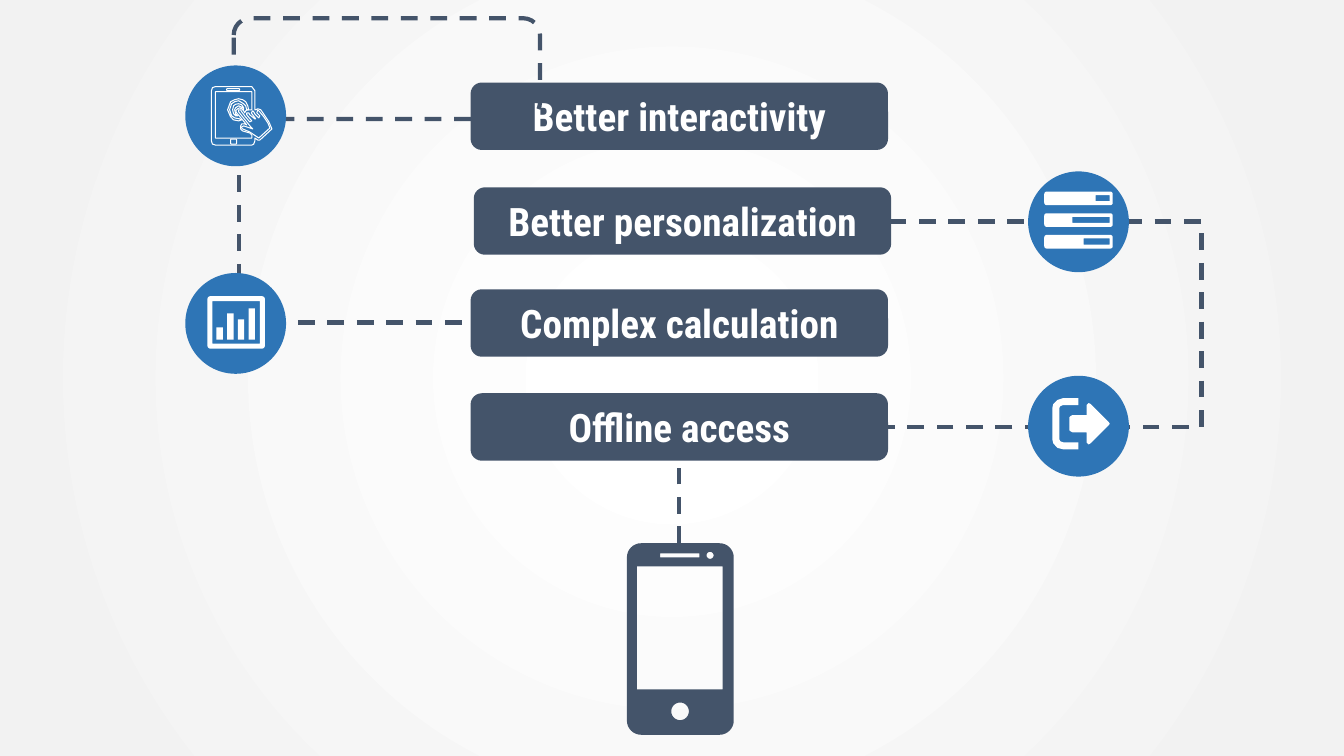
"""Build a slide on the benefits of mobile apps, with dashed links, round icons and a phone."""
from dataclasses import dataclass
from math import cos, pi, sin

from pptx import Presentation
from pptx.dml.color import RGBColor
from pptx.enum.dml import MSO_LINE
from pptx.enum.shapes import MSO_CONNECTOR as LINK, MSO_SHAPE as SHAPE
from pptx.enum.text import MSO_ANCHOR, PP_ALIGN
from pptx.oxml import parse_xml
from pptx.oxml.ns import nsdecls, qn
from pptx.util import Cm, Pt


@dataclass(frozen=True)
class Theme:
    slate: RGBColor = RGBColor(0x44, 0x54, 0x6A)
    blue: RGBColor = RGBColor(0x2E, 0x75, 0xB6)
    white: RGBColor = RGBColor(0xFF, 0xFF, 0xFF)
    mist: RGBColor = RGBColor(0xF2, 0xF2, 0xF2)
    font: str = "Roboto Condensed"
    label_size: Pt = Pt(28)
    link_width: Pt = Pt(3)
    icon_width: Pt = Pt(0.75)


def rounded(left, top, width, height, radius=0.0):
    """Return the points of a rectangle with rounded corners."""
    right, bottom = left + width - radius, top + height - radius
    left, top = left + radius, top + radius
    corners = [(right, bottom), (left, bottom), (left, top), (right, top)]
    steps = 8 if radius else 0
    return [
        (x + radius * cos(angle), y + radius * sin(angle))
        for quarter, (x, y) in enumerate(corners)
        for angle in [(quarter + step / max(steps, 1)) * pi / 2 for step in range(steps + 1)]
    ]


THEME = Theme()
SLIDE_SIZE = (33.87, 19.05)
LABEL_SIZE = (10.52, 1.7)
LABELS = [
    ("Offline access", 11.86, 9.91),
    ("Complex calculation", 11.86, 7.29),
    ("Better personalization", 11.94, 4.72),
    ("Better interactivity", 11.86, 2.08),
]
LOOP = (5.89, 0.46, 7.72, 2.54)
PHONE_LINK = (17.12, 13.69, 17.12, 11.61)
BENT_LINKS = [
    ((5.94, 3.02, 11.86, 8.13), 6.02),
    ((22.42, 5.58, 22.35, 10.76), 30.28),
]
CIRCLE = 2.54
GRID = CIRCLE / 100

PHONE_PLACE = (15.8, 13.69)
PHONE = [
    rounded(0, 0, 106, 190, 14),
    rounded(10, 23, 85, 122),
    rounded(33, 10, 39, 4),
    rounded(79, 8.5, 7, 7, 3.5),
    rounded(44, 158, 17.5, 17.5, 8.75),
]
SERVER = [
    outline
    for row, slot_left in enumerate([67, 44, 55])
    for outline in (
        rounded(16, 20 + 21.5 * row, 68, 13.5, 2.5),
        rounded(slot_left, 23.5 + 21.5 * row, 81 - slot_left, 6),
    )
]
BARS = [rounded(22, 23, 57, 52, 3), rounded(27, 28, 47, 42)] + [
    rounded(31 + 10.6 * column, top, 6.3, 66 - top)
    for column, top in enumerate([54, 40, 46, 35])
]
EXIT = [
    [(50, 22), (35, 22), (29, 24), (25, 28), (24, 32), (24, 63), (25, 67), (29, 71.5),
     (35, 73), (50, 73), (50, 66), (35, 66), (32, 65), (31, 63), (31, 32), (32, 30),
     (35, 29), (50, 29)],
    [(81, 47.5), (80, 49), (62, 67), (60, 68), (58, 66), (58, 56), (44, 56), (42, 55),
     (41, 54), (41, 41), (42, 40), (44, 39), (58, 39), (58, 29), (60, 27), (62, 28),
     (80, 46)],
]
TOUCH = [
    [(30, 21), (66, 21), (69, 25), (69, 44), (70, 44), (72, 43), (75, 44), (79, 50),
     (83, 56), (86, 63), (74, 74), (72, 74), (69, 72), (69, 75), (68, 78), (66, 79),
     (30, 79), (27, 78), (26, 75), (26, 25), (27, 22)],
    [(71, 47), (74, 50), (73, 52), (69, 48), (68, 46), (67, 45), (65.5, 47), (70, 53),
     (69, 53), (64, 49), (63, 47), (61, 47), (61, 49), (66, 55), (64, 56), (59, 50),
     (56, 46), (55, 44), (53, 44), (53, 46), (65, 61), (67, 63), (64, 62), (58, 60),
     (56, 61), (56, 62), (57, 63), (64, 66), (73, 72), (84, 62), (82, 57), (78, 51),
     (73, 45), (72, 44)],
    [(66, 44), (62, 44), (60, 45), (59, 47), (58, 45), (56, 43), (54, 42), (52, 43),
     (50, 45), (51, 47), (61, 59), (59, 58), (56, 58), (55, 60), (55, 63), (57, 65),
     (64, 67), (66, 69), (66, 72), (30, 72), (30, 26), (66, 26)],
    [(53, 38), (56, 39), (58, 42), (58, 44), (57, 42), (55, 41), (53, 40), (50, 42),
     (49, 44), (50, 48), (52, 50), (50, 50), (48, 48), (47, 44), (48, 40), (50, 38.5)],
    [(53, 33), (57, 34), (60, 36), (62, 40), (63, 44), (61, 44), (60, 40), (58, 38),
     (53, 35), (49, 36), (46, 38), (44, 44), (46, 50), (49, 52), (54, 53), (56, 54),
     (53, 55), (48, 54), (45, 51), (42, 44), (45, 36), (49, 34)],
    rounded(45, 73, 6, 5, 1),
    rounded(41, 23, 13, 2, 1),
]
ICONS = [
    (4.67, 1.65, TOUCH, False),
    (4.67, 6.88, BARS, True),
    (25.91, 9.47, EXIT, True),
    (25.91, 4.32, SERVER, True),
]


def paint(shape, fill=None):
    """Give a shape a plain fill, or none, without line or shadow."""
    shape.shadow.inherit = False
    shape.line.fill.background()
    if fill is None:
        shape.fill.background()
    else:
        shape.fill.solid()
        shape.fill.fore_color.rgb = fill


def dash(line):
    line.color.rgb = THEME.slate
    line.width = THEME.link_width
    line.dash_style = MSO_LINE.DASH


def paint_background(page):
    """Fill the page with a gradient that spreads from its centre."""
    fill = page.background.fill
    fill.gradient()
    for stop, (place, colour) in zip(fill.gradient_stops, [(0.07, THEME.white), (0.91, THEME.mist)]):
        stop.position = place
        stop.color.rgb = colour
    linear = page.element.find(".//" + qn("a:lin"))
    linear.getparent().replace(linear, parse_xml(
        f'<a:path {nsdecls("a")} path="circle">'
        '<a:fillToRect l="50000" t="50000" r="50000" b="50000"/></a:path>'))


def add_label(page, text, left, top):
    box = page.shapes.add_shape(SHAPE.ROUNDED_RECTANGLE, Cm(left), Cm(top), *map(Cm, LABEL_SIZE))
    paint(box, THEME.slate)
    box.text_frame.vertical_anchor = MSO_ANCHOR.MIDDLE
    para = box.text_frame.paragraphs[0]
    para.text = text
    para.alignment = PP_ALIGN.CENTER
    para.font.name, para.font.size, para.font.bold = THEME.font, THEME.label_size, True
    para.font.color.rgb = THEME.white
    return box


def add_link(page, kind, ends):
    link = page.shapes.add_connector(kind, *map(Cm, ends))
    dash(link.line)
    link.element.spPr.append(parse_xml(f'<a:effectLst {nsdecls("a")}/>'))
    return link


def add_bent_link(page, ends, bend):
    link = add_link(page, LINK.ELBOW, ends)
    share = round((bend - ends[0]) / (ends[2] - ends[0]) * 100000)
    link.element.find(".//" + qn("a:avLst")).append(
        parse_xml(f'<a:gd {nsdecls("a")} name="adj1" fmla="val {share}"/>'))


def add_outlines(page, left, top, outlines):
    """Draw closed outlines, given in grid units, as one freeform."""
    placed = [[(Cm(left + x * GRID), Cm(top + y * GRID)) for x, y in outline] for outline in outlines]
    builder = page.shapes.build_freeform(*placed[0][0])
    for index, points in enumerate(placed):
        if index:
            builder.move_to(*points[0])
        builder.add_line_segments(points[1:], close=True)
    return builder.convert_to_shape()


def main():
    deck = Presentation()
    deck.slide_width, deck.slide_height = map(Cm, SLIDE_SIZE)
    page = deck.slides.add_slide(deck.slide_layouts[6])
    paint_background(page)

    paint(add_outlines(page, *PHONE_PLACE, PHONE), THEME.slate)
    boxes = [add_label(page, *label) for label in LABELS]

    add_link(page, LINK.STRAIGHT, PHONE_LINK).end_connect(boxes[0], 2)
    loop = page.shapes.add_shape(SHAPE.ROUNDED_RECTANGLE, *map(Cm, LOOP))
    paint(loop)
    dash(loop.line)
    for ends, bend in BENT_LINKS:
        add_bent_link(page, ends, bend)

    for left, top, outlines, solid in ICONS:
        circle = page.shapes.add_shape(SHAPE.OVAL, *map(Cm, (left, top, CIRCLE, CIRCLE)))
        paint(circle, THEME.blue)
        icon = add_outlines(page, left, top, outlines)
        paint(icon, THEME.white if solid else None)
        if not solid:
            icon.line.color.rgb = THEME.white
            icon.line.width = THEME.icon_width

    deck.save("out.pptx")


if __name__ == "__main__":
    main()
